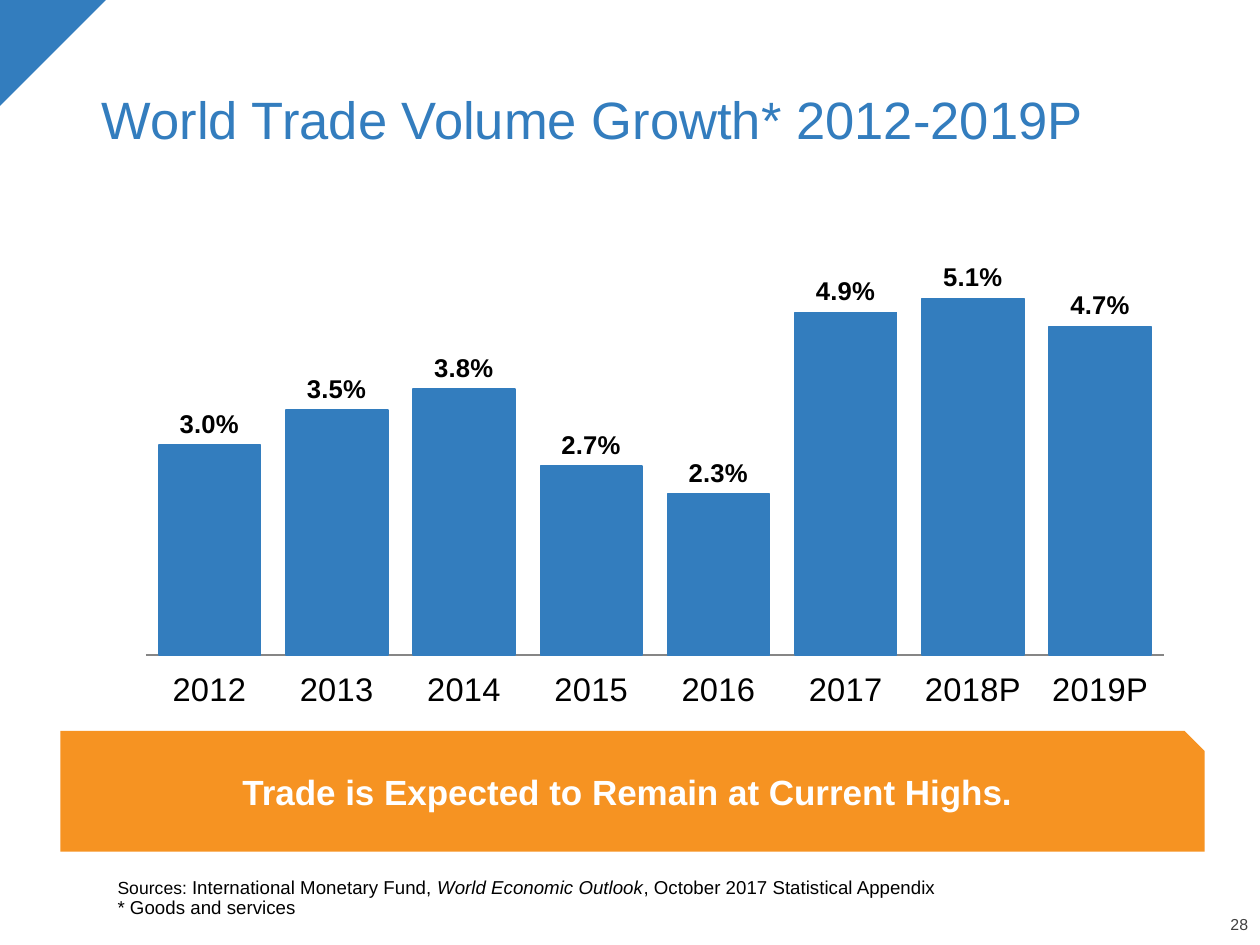
from copy import deepcopy

from lxml import etree
from pptx import Presentation
from pptx.chart.data import CategoryChartData
from pptx.dml.color import RGBColor
from pptx.enum.chart import XL_CHART_TYPE, XL_LABEL_POSITION, XL_TICK_LABEL_POSITION, XL_TICK_MARK
from pptx.enum.shapes import MSO_SHAPE
from pptx.enum.text import MSO_ANCHOR, PP_ALIGN
from pptx.oxml.ns import qn
from pptx.util import Inches, Pt

COLUMNS = XL_CHART_TYPE.COLUMN_CLUSTERED
OUTSIDE_END = XL_LABEL_POSITION.OUTSIDE_END
LOW = XL_TICK_LABEL_POSITION.LOW
NO_TICKS = XL_TICK_MARK.NONE
TRIANGLE, SNIPPED = MSO_SHAPE.RIGHT_TRIANGLE, MSO_SHAPE.SNIP_1_RECTANGLE
MIDDLE, BOTTOM = MSO_ANCHOR.MIDDLE, MSO_ANCHOR.BOTTOM
LEFT, CENTER, RIGHT = PP_ALIGN.LEFT, PP_ALIGN.CENTER, PP_ALIGN.RIGHT
COLORS = {"blue": "337DBE", "orange": "F69322", "black": "000000",
          "white": "FFFFFF", "page": "404040", "axis": "868686"}
FONT = "Arial"


def color(name):
    return RGBColor.from_string(COLORS[name])


def write(shape, lines, size, ink, align, anchor, margins, bold=False):
    """Fill a shape with one paragraph; each line is a list of (text, italic) runs."""
    frame = shape.text_frame
    frame.word_wrap = True
    frame.vertical_anchor = anchor
    (frame.margin_left, frame.margin_top,
     frame.margin_right, frame.margin_bottom) = map(Inches, margins)
    paragraph = frame.paragraphs[0]
    paragraph.alignment = align
    paragraph.line_spacing = 0.9
    for i, line in enumerate(lines):
        if i:
            # The break takes the format of the run before it
            paragraph.add_line_break()
            paragraph._p[-1].append(deepcopy(run._r.rPr))
        for text, italic in line:
            run = paragraph.add_run()
            run.text = text
            run.font.name, run.font.size = FONT, Pt(size)
            run.font.bold, run.font.italic = bold, italic
            run.font.color.rgb = color(ink)


# Slide in 4:3 format
prs = Presentation()
prs.slide_width, prs.slide_height = Inches(7.5), Inches(7.5 * 3 / 4)
slide = prs.slides.add_slide(prs.slide_layouts[6])
shapes = slide.shapes

# Corner triangle
corner = shapes.add_shape(TRIANGLE, 0, 0, Inches(0.63), Inches(0.63))
corner.rotation = 90
corner.shadow.inherit = False
corner.fill.solid()
corner.fill.fore_color.rgb = color("blue")
corner.line.fill.background()

# Page number, title and sources
page_number = shapes.add_textbox(Inches(7.07), Inches(5.46), Inches(0.36), Inches(0.1))
write(page_number, [[("28", False)]], 6.8, "page", RIGHT, BOTTOM, (0, 0, 0, 0))

title = shapes.add_textbox(Inches(0.06), Inches(0.17), Inches(6.94), Inches(0.78))
write(title, [[("World Trade Volume Growth* 2012-2019P", False)]],
      22.5, "blue", CENTER, BOTTOM, (0.1, 0.05, 0.1, 0.05))

sources = shapes.add_textbox(Inches(0.7), Inches(5.13), Inches(6.3), Inches(0.34))
write(sources,
      [[("Sources: ", False), ("International Monetary Fund, ", False),
        ("World Economic Outlook", True), (", October 2017 Statistical Appendix", False)],
       [("* Goods and services", False)]],
      8, "black", LEFT, BOTTOM, (0, 0, 0, 0))
sources.text_frame.paragraphs[0].runs[0].font.size = Pt(7.5)

# Growth chart
growth = CategoryChartData(number_format="0.0%")
growth.categories = ["2012", "2013", "2014", "2015", "2016", "2017", "2018P", "2019P"]
growth.add_series("Series 1", [0.03, 0.035, 0.038, 0.027, 0.023, 0.049, 0.051, 0.047])
chart = shapes.add_chart(COLUMNS, Inches(0.28), Inches(1.21),
                         Inches(6.77), Inches(3.21), growth).chart
chart.has_legend = False
chart.has_title = False
chart.font.name, chart.font.size = FONT, Pt(14)
chart.font.color.rgb = color("black")

years = chart.category_axis
years.tick_label_position = LOW
years.major_tick_mark = NO_TICKS
years.format.line.color.rgb = color("axis")
years.format.line.width = Pt(0.75)
percent = chart.value_axis
percent.minimum_scale, percent.maximum_scale = 0, 0.06
percent.has_major_gridlines = False
percent.visible = False

plot = chart.plots[0]
plot.gap_width = 25
plot.vary_by_categories = False
bars = plot.series[0]
bars.format.fill.solid()
bars.format.fill.fore_color.rgb = color("blue")
bars.format.line.color.rgb = color("blue")
bars.format.line.width = Pt(0.75)

labels = bars.data_labels
labels.show_value = True
labels.position = OUTSIDE_END
labels.number_format, labels.number_format_is_linked = "0.0%", False
labels.font.name, labels.font.size, labels.font.bold = FONT, Pt(11), True
labels.font.color.rgb = color("black")

# Fixed inner plot area
plot_area = chart.element.find(".//" + qn("c:plotArea"))
layout = plot_area.find(qn("c:layout"))
if layout is None:
    layout = etree.Element(qn("c:layout"))
    plot_area.insert(0, layout)
manual = etree.SubElement(layout, qn("c:manualLayout"))
for tag, value in [("layoutTarget", "inner"), ("xMode", "edge"), ("yMode", "edge"),
                   ("x", 0.087), ("y", 0.06), ("w", 0.895), ("h", 0.778)]:
    etree.SubElement(manual, qn("c:" + tag)).set("val", str(value))

# Takeaway banner
banner = shapes.add_shape(SNIPPED, Inches(0.36), Inches(4.35), Inches(6.81), Inches(0.72))
banner.shadow.inherit = False
banner.fill.solid()
banner.fill.fore_color.rgb = color("orange")
banner.line.fill.background()
write(banner, [[("Trade is Expected to Remain at Current Highs.", False)]],
      15, "white", CENTER, MIDDLE, (0.07, 0.04, 0.07, 0.07), bold=True)

prs.save("out.pptx")
